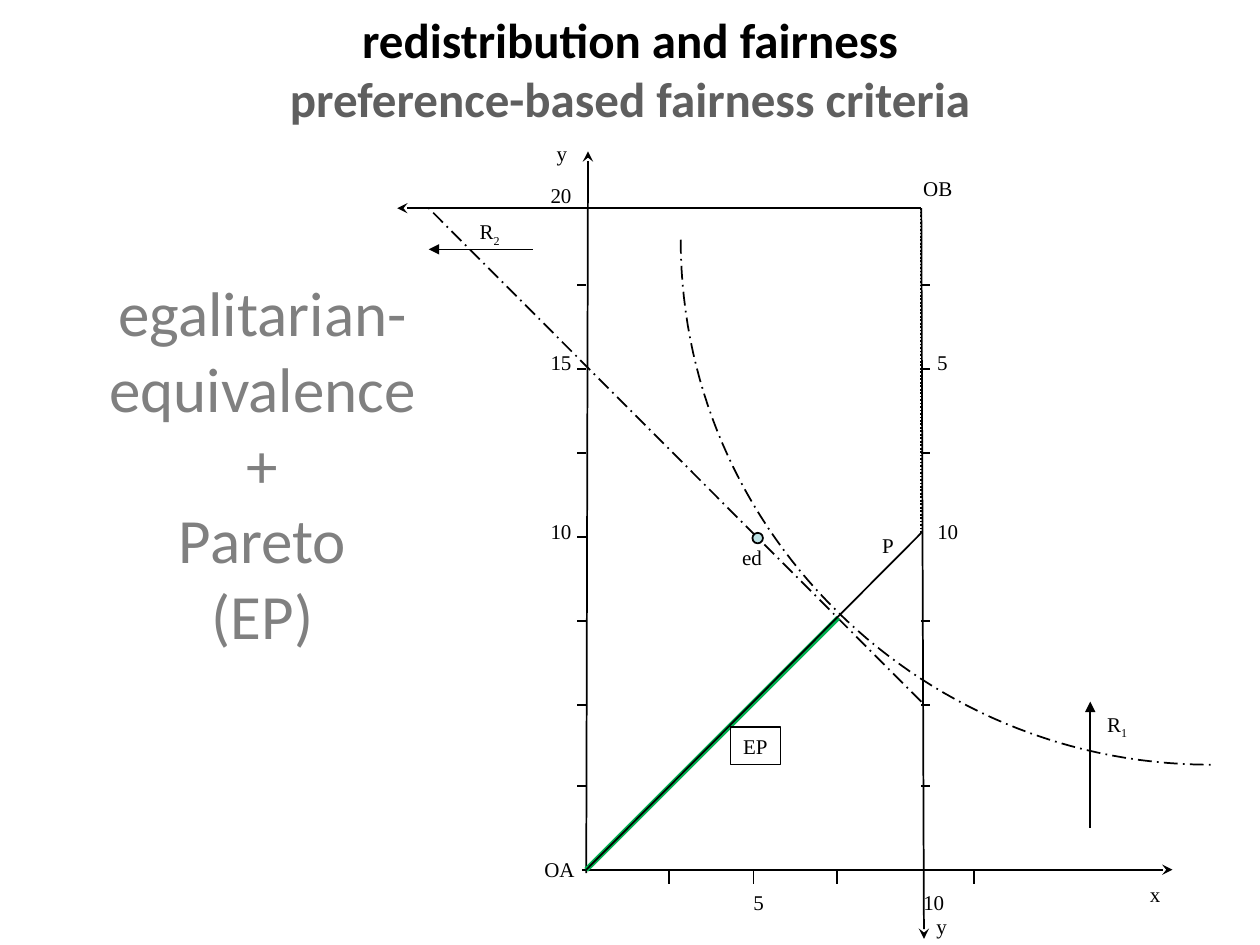
from dataclasses import dataclass
from typing import Optional

from lxml.etree import SubElement
from pptx import Presentation
from pptx.dml.color import RGBColor
from pptx.enum.dml import MSO_LINE
from pptx.enum.shapes import MSO_CONNECTOR, MSO_SHAPE
from pptx.enum.text import MSO_ANCHOR, MSO_AUTO_SIZE, PP_ALIGN
from pptx.oxml.ns import qn
from pptx.slide import Slide
from pptx.text.text import TextFrame
from pptx.util import Pt

BLACK = "000000"
LABEL_FONT = "Times New Roman"
LEFT_AXIS, RIGHT_AXIS = 335, 526.5
BOTTOM_AXIS, TOP_AXIS = 497, 119
TICK_LENGTH = 5
TICK_ROWS = [*range(163, 404, 48), 449]
TICK_COLUMNS = [382.5, 430.5, 478.5, 556.5]
MISSING_RIGHT_TICK = 307


@dataclass
class Line:
    x1: float
    y1: float
    x2: float
    y2: float
    head: Optional[str] = None
    dash: Optional[MSO_LINE] = None
    color: str = BLACK
    width: float = 1


@dataclass
class Label:
    text: str
    left: float
    top: float
    width: float
    subscript: str = ""


AXES = [
    Line(332.5, BOTTOM_AXIS, 670, BOTTOM_AXIS, head="stealth"),
    Line(LEFT_AXIS, 499, 336, 86.5, head="stealth"),
    Line(RIGHT_AXIS, TOP_AXIS, 528, 536.5, head="stealth"),
    Line(RIGHT_AXIS, TOP_AXIS, 227, TOP_AXIS, head="stealth"),
]
TICKS = (
    [Line(LEFT_AXIS - TICK_LENGTH, y, LEFT_AXIS, y) for y in TICK_ROWS]
    + [Line(RIGHT_AXIS, y, RIGHT_AXIS + TICK_LENGTH, y)
       for y in TICK_ROWS if y != MISSING_RIGHT_TICK]
    + [Line(x, BOTTOM_AXIS, x, BOTTOM_AXIS + 8) for x in TICK_COLUMNS]
)
PREFERENCE_LINES = [
    Line(RIGHT_AXIS, 304.5, RIGHT_AXIS, TOP_AXIS, dash=MSO_LINE.ROUND_DOT),
    Line(RIGHT_AXIS, 401, 245, TOP_AXIS, dash=MSO_LINE.LONG_DASH_DOT),
    Line(304.5, 142.5, 245, 142.5, head="triangle"),
    Line(623, 473, 623, 401, head="triangle"),
]
EFFICIENT_LINES = [
    Line(LEFT_AXIS, BOTTOM_AXIS, 479, 353, color="00B050", width=3),
    Line(LEFT_AXIS, BOTTOM_AXIS, RIGHT_AXIS, 304.5),
]
LABELS = [
    Label("20", 307.5, 101, 26.5),
    Label("15", 307.5, 196, 26.5),
    Label("10", 307.5, 293, 26.5),
    Label("5", 528.5, 196, 20),
    Label("10", 528.5, 293, 26.5),
    Label("5", 423.5, 505, 20),
    Label("10", 520.5, 505, 26.5),
    Label("y", 311, 77, 20),
    Label("x", 650, 500, 20),
    Label("y", 528, 518.5, 20),
    Label("P", 497, 301, 21),
    Label("R", 267, 121.5, 26.5, subscript="2"),
    Label("R", 625.5, 403, 26.5, subscript="1"),
    Label("OB", 520.5, 97, 31),
    Label("OA", 304, 486, 31.5),
    Label("ed", 417, 307.5, 26),
]


def rgb(color: str) -> RGBColor:
    return RGBColor.from_string(color)


def style_text(frame: TextFrame, font: str, size: float, color: str, bold: bool = False) -> None:
    for paragraph in frame.paragraphs:
        for run in paragraph.runs:
            run.font.name = font
            run.font.size = Pt(size)
            run.font.bold = bold
            run.font.color.rgb = rgb(color)


def fit_label(frame: TextFrame) -> None:
    frame.word_wrap = False
    frame.auto_size = MSO_AUTO_SIZE.SHAPE_TO_FIT_TEXT
    style_text(frame, LABEL_FONT, 12, BLACK)


def style_outline(shape) -> None:
    shape.shadow.inherit = False
    shape.line.color.rgb = rgb(BLACK)
    shape.line.width = Pt(1)


def draw_line(slide: Slide, line: Line) -> None:
    connector = slide.shapes.add_connector(
        MSO_CONNECTOR.STRAIGHT, Pt(line.x1), Pt(line.y1), Pt(line.x2), Pt(line.y2))
    connector.line.color.rgb = rgb(line.color)
    connector.line.width = Pt(line.width)
    if line.dash is not None:
        connector.line.dash_style = line.dash
    if line.head:
        SubElement(connector.get_or_add_ln(), qn("a:tailEnd"), type=line.head)
    SubElement(connector._element.spPr, qn("a:effectLst"))


def draw_label(slide: Slide, label: Label) -> None:
    box = slide.shapes.add_textbox(Pt(label.left), Pt(label.top), Pt(label.width), Pt(21.5))
    frame = box.text_frame
    frame.text = label.text
    if label.subscript:
        run = frame.paragraphs[0].add_run()
        run.text = label.subscript
        run._r.get_or_add_rPr().set("baseline", "-25000")
    fit_label(frame)


def draw_indifference_curve(slide: Slide, steps: int = 60) -> None:
    """Sample the cubic Bézier curve of agent 1 as a fine open outline."""
    controls = [(389, 137), (389, 302.5), (525.5, 437), (692, 437)]
    points = []
    for step in range(steps + 1):
        t = step / steps
        weights = ((1 - t) ** 3, 3 * t * (1 - t) ** 2, 3 * t ** 2 * (1 - t), t ** 3)
        points.append(tuple(
            Pt(sum(weight * control[axis] for weight, control in zip(weights, controls)))
            for axis in (0, 1)))
    builder = slide.shapes.build_freeform(*points[0])
    builder.add_line_segments(points[1:], close=False)
    curve = builder.convert_to_shape()
    style_outline(curve)
    curve.fill.background()
    curve.line.dash_style = MSO_LINE.LONG_DASH_DOT


def draw_ep_box(slide: Slide) -> None:
    box = slide.shapes.add_shape(MSO_SHAPE.RECTANGLE, Pt(417.5), Pt(415.5), Pt(28.5), Pt(21.5))
    style_outline(box)
    box.fill.background()
    box.text_frame.text = "EP"
    fit_label(box.text_frame)


def draw_endowment(slide: Slide) -> None:
    dot = slide.shapes.add_shape(
        MSO_SHAPE.FLOWCHART_CONNECTOR, Pt(430), Pt(304.5), Pt(6), Pt(6))
    style_outline(dot)
    dot.fill.solid()
    dot.fill.fore_color.rgb = rgb("BBE0E3")


def write_title(slide: Slide) -> None:
    title = slide.shapes.title
    title.left, title.top, title.width, title.height = Pt(25), Pt(151), Pt(250), Pt(227)
    frame = title.text_frame
    frame.text = "egalitarian-equivalence\v+\vPareto\v(EP)"
    frame.vertical_anchor = MSO_ANCHOR.MIDDLE
    frame.paragraphs[0].alignment = PP_ALIGN.CENTER
    style_text(frame, "Calibri", 36, "808080")


def write_heading(slide: Slide) -> None:
    frame = slide.shapes.add_textbox(Pt(36), Pt(-6), Pt(648), Pt(90)).text_frame
    frame.word_wrap = True
    frame.vertical_anchor = MSO_ANCHOR.MIDDLE
    frame.text = "redistribution and fairness\vpreference-based fairness criteria"
    paragraph = frame.paragraphs[0]
    paragraph.alignment = PP_ALIGN.CENTER
    style_text(frame, "Calibri", 28, BLACK, bold=True)
    paragraph.runs[1].font.color.rgb = rgb("5F5F5F")


def main() -> None:
    presentation = Presentation()
    presentation.slide_width, presentation.slide_height = Pt(720), Pt(540)
    slide = presentation.slides.add_slide(presentation.slide_layouts[5])
    write_title(slide)
    for line in AXES + TICKS + PREFERENCE_LINES:
        draw_line(slide, line)
    draw_indifference_curve(slide)
    for line in EFFICIENT_LINES:
        draw_line(slide, line)
    draw_ep_box(slide)
    draw_endowment(slide)
    for label in LABELS:
        draw_label(slide, label)
    write_heading(slide)
    presentation.save("out.pptx")


if __name__ == "__main__":
    main()
